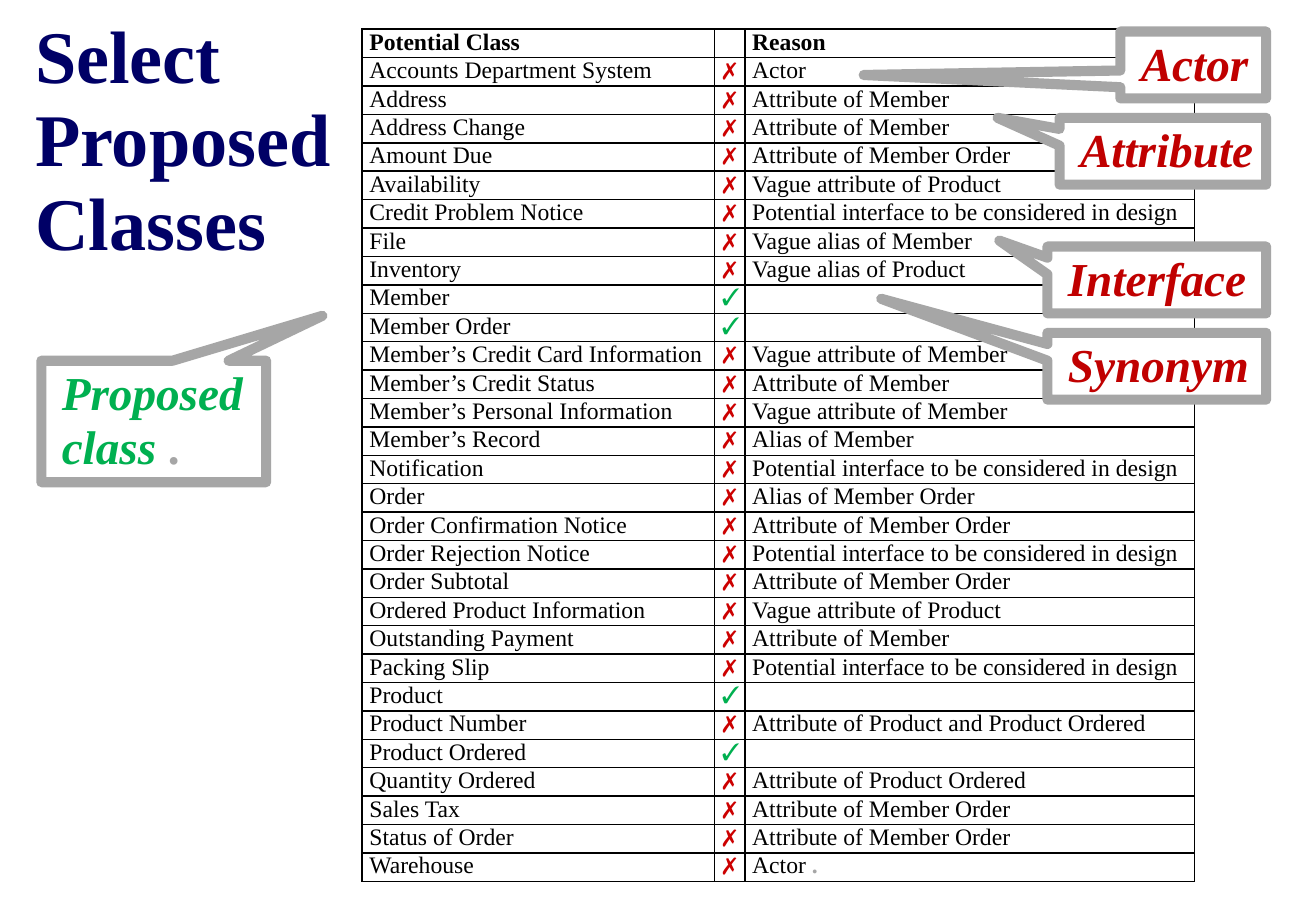
import pptx
import pptx.util
import pptx.dml.color
import pptx.enum.shapes
import pptx.enum.text
import pptx.oxml.ns
from lxml import etree

Inches, Pt = pptx.util.Inches, pptx.util.Pt
ALIGN, ANCHOR = pptx.enum.text.PP_ALIGN, pptx.enum.text.MSO_ANCHOR
COLORS = {"navy": "000066", "black": "000000", "white": "FFFFFF", "cross": "CC0000",
          "green": "00B050", "red": "C00000", "gray": "A6A6A6"}


def rgb(name):
    return pptx.dml.color.RGBColor.from_string(COLORS[name])


def style_run(run, size, color, bold=False, italic=False):
    run.font.name = "Times New Roman"
    run.font.size = Pt(size)
    run.font.bold = bold
    run.font.italic = italic
    run.font.color.rgb = rgb(color)


presentation = pptx.Presentation()
presentation.slide_width, presentation.slide_height = Inches(10.83), Inches(7.5)
slide = presentation.slides.add_slide(presentation.slide_layouts[6])

# Title
title = slide.shapes.add_textbox(Inches(0.19), Inches(0.18), Inches(10), Inches(2.07)).text_frame
title.word_wrap = True
title.vertical_anchor = ANCHOR.BOTTOM
title.text = "Select\vProposed\vClasses"
title.paragraphs[0].line_spacing = 0.94
for run in title.paragraphs[0].runs:
    style_run(run, 44, "navy", bold=True)

# Table of candidates: one without a reason for rejection is accepted
CANDIDATES = [
    ("Accounts Department System", "Actor"),
    ("Address", "Attribute of Member"),
    ("Address Change", "Attribute of Member"),
    ("Amount Due", "Attribute of Member Order"),
    ("Availability", "Vague attribute of Product"),
    ("Credit Problem Notice", "Potential interface to be considered in design"),
    ("File", "Vague alias of Member"),
    ("Inventory", "Vague alias of Product"),
    ("Member", ""),
    ("Member Order", ""),
    ("Member’s Credit Card Information", "Vague attribute of Member"),
    ("Member’s Credit Status", "Attribute of Member"),
    ("Member’s Personal Information", "Vague attribute of Member"),
    ("Member’s Record", "Alias of Member"),
    ("Notification", "Potential interface to be considered in design"),
    ("Order", "Alias of Member Order"),
    ("Order Confirmation Notice", "Attribute of Member Order"),
    ("Order Rejection Notice", "Potential interface to be considered in design"),
    ("Order Subtotal", "Attribute of Member Order"),
    ("Ordered Product Information", "Vague attribute of Product"),
    ("Outstanding Payment", "Attribute of Member"),
    ("Packing Slip", "Potential interface to be considered in design"),
    ("Product", ""),
    ("Product Number", "Attribute of Product and Product Ordered"),
    ("Product Ordered", ""),
    ("Quantity Ordered", "Attribute of Product Ordered"),
    ("Sales Tax", "Attribute of Member Order"),
    ("Status of Order", "Attribute of Member Order"),
    ("Warehouse", "Actor"),
]
rows = [("Potential Class", "", "Reason")]
rows += [(name, "✗" if reason else "✓", reason) for name, reason in CANDIDATES]
MARK_COLORS = {"✗": "cross", "✓": "green"}

table = slide.shapes.add_table(len(rows), 3, Inches(2.98), Inches(0.24),
                               Inches(6.85), Inches(7.01)).table
table.first_row = table.horz_banding = False
for column, width in zip(table.columns, (2.9, 0.25, 3.7)):
    column.width = Inches(width)
for r, row in enumerate(rows):
    table.rows[r].height = Inches(7.01 / len(rows))
    for c, text in enumerate(row):
        cell = table.cell(r, c)
        cell.margin_left = cell.margin_right = Inches(0.06)
        cell.margin_top = cell.margin_bottom = 0
        cell.text_frame.text = text
        paragraph = cell.text_frame.paragraphs[0]
        paragraph.alignment = ALIGN.CENTER if c == 1 else ALIGN.LEFT
        for run in paragraph.runs:
            style_run(run, 14, MARK_COLORS.get(text, "black"), bold=r == 0 or text == "✓")
        if not text:  # keeps an empty cell from stretching its row
            etree.SubElement(paragraph._p, pptx.oxml.ns.qn("a:endParaRPr"), sz="1400")
        properties = cell._tc.get_or_add_tcPr()
        for side in ("a:lnL", "a:lnR", "a:lnT", "a:lnB"):
            border = etree.SubElement(properties, pptx.oxml.ns.qn(side), w=str(Pt(1)))
            fill = etree.SubElement(border, pptx.oxml.ns.qn("a:solidFill"))
            etree.SubElement(fill, pptx.oxml.ns.qn("a:srgbClr"), val=COLORS["black"])
        cell.fill.solid()
        cell.fill.fore_color.rgb = rgb("white")
full_stop = table.cell(len(rows) - 1, 2).text_frame.paragraphs[0].add_run()
full_stop.text = " ."
style_run(full_stop, 14, "gray", bold=True)

# Callouts: label, color, left, top, width, height, pointer offset
CALLOUTS = [
    ("Actor", "red", 9.22, 0.26, 1.2, 0.55, (-2.26, 0.15)),
    ("Attribute", "red", 8.72, 0.97, 1.7, 0.55, (-0.8, -0.5)),
    ("Synonym", "red", 8.62, 2.74, 1.8, 0.55, (-1.26, -1.01)),
    ("Interface", "red", 8.62, 2.03, 1.8, 0.55, (-0.72, -0.59)),
    ("Proposed class ", "green", 0.34, 2.97, 1.85, 1, (0.75, -0.87)),
]
for label, color, left, top, width, height, pointer in CALLOUTS:
    callout = slide.shapes.add_shape(
        pptx.enum.shapes.MSO_SHAPE.RECTANGULAR_CALLOUT,
        Inches(left), Inches(top), Inches(width), Inches(height))
    callout.adjustments[0], callout.adjustments[1] = pointer
    callout.shadow.inherit = False
    callout.fill.solid()
    callout.fill.fore_color.rgb = rgb("white")
    callout.line.color.rgb = rgb("gray")
    callout.line.width = Pt(6)
    frame = callout.text_frame
    frame.word_wrap = True
    frame.vertical_anchor = ANCHOR.MIDDLE
    frame.margin_right = Inches(0.05)
    frame.text = label
    paragraph = frame.paragraphs[0]
    paragraph.alignment = ALIGN.LEFT
    paragraph.line_spacing = 0.95
    paragraph._p.get_or_add_pPr().set("marL", str(Inches(0.07)))
    style_run(paragraph.runs[0], 28, color, bold=True, italic=True)
# The last callout ends with a gray full stop
full_stop = paragraph.add_run()
full_stop.text = "."
style_run(full_stop, 28, "gray", bold=True)

presentation.save("out.pptx")
